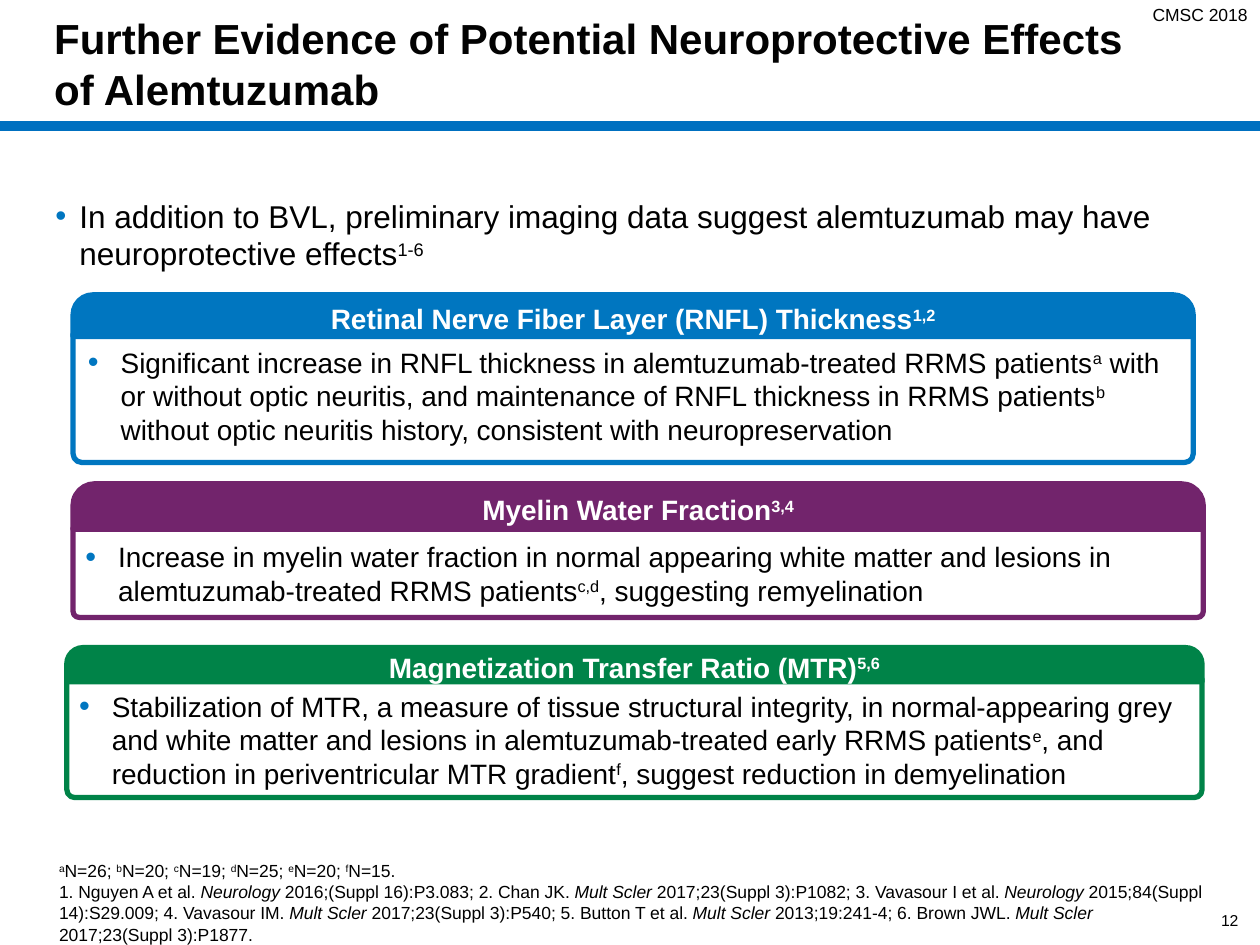
from lxml.etree import SubElement as Sub
from pptx import Presentation
from pptx.dml.color import RGBColor as Rgb
from pptx.enum.shapes import MSO_CONNECTOR as Conn, MSO_SHAPE as Shape
from pptx.enum.text import MSO_ANCHOR as Anchor, MSO_AUTO_SIZE as Fit, PP_ALIGN as Align
from pptx.oxml.ns import qn
from pptx.util import Inches, Pt

HUES = {"black": "000000", "title": "020202", "white": "FFFFFF", "rule": "0070C0",
        "blue": "0076C0", "plum": "72246C", "green": "008348"}


def hue(name):
    return Rgb.from_string(HUES[name])


def write(shape, text, size=16, color="black", bold=False, align=Align.LEFT,
          anchor=Anchor.TOP, indent=0, before=0, scale=100):
    """Fill a shape with text; ^x^ is superscript, _x_ is italic, | breaks a line."""
    frame = shape.text_frame
    frame.word_wrap, frame.auto_size = True, Fit.NONE
    frame.vertical_anchor = anchor
    for n, line in enumerate(text.split("\n")):
        para = frame.add_paragraph() if n else frame.paragraphs[0]
        para.alignment, para.space_before = align, Pt(before)
        if indent:
            props = para._p.get_or_add_pPr()
            props.set("marL", str(Inches(indent)))
            props.set("indent", str(-Inches(indent)))
            Sub(Sub(props, qn("a:buClr")), qn("a:srgbClr"), val=HUES["blue"])
            Sub(props, qn("a:buSzPct"), val=str(scale * 1000))
            Sub(props, qn("a:buFont"), typeface="Arial")
            Sub(props, qn("a:buChar"), char="•")
        for i, part in enumerate(line.split("^")):
            for j, bit in enumerate(part.split("_")):
                for k, words in enumerate(bit.split("|")):
                    if k:
                        para.add_line_break()
                    if not words:
                        continue
                    run = para.add_run()
                    run.text = words
                    font = run.font
                    font.name, font.size, font.bold = "Arial", Pt(size), bold
                    font.italic = j % 2 == 1
                    font.color.rgb = hue(color)
                    if i % 2:
                        font._element.set("baseline", "30000")


deck = Presentation()
deck.slide_width, deck.slide_height = Inches(10), Inches(7.5)
slide = deck.slides.add_slide(deck.slide_layouts[1])
shapes = slide.shapes

# Title and rule
title = shapes.title
title.left, title.top, title.width, title.height = map(Inches, (0.33, 0, 9.51, 1))
write(title, "Further Evidence of Potential Neuroprotective Effects |of Alemtuzumab",
      size=24, color="title", bold=True, anchor=Anchor.MIDDLE)
rule = shapes.add_connector(Conn.STRAIGHT, 0, Inches(1), Inches(10), Inches(1))
rule.line.color.rgb, rule.line.width = hue("rule"), Pt(5.75)
Sub(rule._element.spPr, qn("a:effectLst"))

# Lead bullet
body = slide.placeholders[1]
body.left, body.top, body.width, body.height = map(Inches, (0.34, 1.51, 9.33, 5.26))
write(body, "In addition to BVL, preliminary imaging data suggest alemtuzumab may have "
      "neuroprotective effects^1-6^", size=18, indent=0.19)

# Panels: color, left, width, head (top, height), frame (top, height),
# text (left, top, width, height), anchor, heading, finding
panels = [
    ("blue", 0.58, 8.89, (2.34, 0.33), (2.65, 1.02), (0.6, 2.69, 8.86, 0.65), Anchor.TOP,
     "Retinal Nerve Fiber Layer (RNFL) Thickness^1,2^",
     "Significant increase in RNFL thickness in alemtuzumab-treated RRMS patients^a^ with "
     "or without optic neuritis, and maintenance of RNFL thickness in RRMS patients^b^ "
     "without optic neuritis history, consistent with neuropreservation"),
    ("green", 0.53, 9.01, (5.14, 0.27), (5.39, 0.94), (0.53, 5.42, 9.01, 0.97), Anchor.TOP,
     "Magnetization Transfer Ratio (MTR)^5,6^",
     "Stabilization of MTR, a measure of tissue structural integrity, in normal-appearing "
     "grey and white matter and lesions in alemtuzumab-treated early RRMS patients^e^, and "
     "reduction in periventricular MTR gradient^f^, suggest reduction in demyelination"),
    ("plum", 0.58, 8.97, (3.84, 0.36), (4.19, 0.71), (0.58, 4.24, 8.96, 0.62), Anchor.MIDDLE,
     "Myelin Water Fraction^3,4^",
     "Increase in myelin water fraction in normal appearing white matter and lesions in "
     "alemtuzumab-treated RRMS patients^c,d^, suggesting remyelination"),
]
for color, left, width, head, frame, area, anchor, heading, finding in panels:
    for (top, height), bend, turn in ((frame, 0.067, 180), (head, 0.479, 0)):
        box = shapes.add_shape(Shape.ROUND_2_SAME_RECTANGLE,
                               *map(Inches, (left, top, width, height)))
        box.adjustments[0], box.adjustments[1] = bend, 0
        box.rotation, box.shadow.inherit = turn, False
        box.line.color.rgb, box.line.width = hue(color), Pt(3)
        if turn:
            box.fill.background()
        else:
            box.fill.solid()
            box.fill.fore_color.rgb = hue(color)
            write(box, heading, color="white", bold=True, align=Align.CENTER,
                  anchor=Anchor.MIDDLE)
    note = shapes.add_textbox(*map(Inches, area))
    write(note, finding, anchor=anchor, indent=0.26, before=6, scale=110)

# Meeting tag, footnotes and page number
tag = shapes.add_textbox(*map(Inches, (8.43, -0.02, 1.57, 0.27)))
write(tag, "CMSC 2018", size=10, align=Align.RIGHT)
notes = shapes.add_textbox(*map(Inches, (0.37, 6.78, 9.28, 0.77)))
write(notes, "^a^N=26; ^b^N=20; ^c^N=19; ^d^N=25; ^e^N=20; ^f^N=15.\n"
      "1. Nguyen A et al. _Neurology_ 2016;(Suppl 16):P3.083; 2. Chan JK. _Mult Scler _"
      "2017;23(Suppl 3):P1082; 3. Vavasour I et al. _Neurology _2015;84(Suppl 14):S29.009; "
      "4. Vavasour IM. _Mult Scler _2017;23(Suppl 3):P540; 5. Button T et al. _Mult Scler _"
      "2013;19:241-4; 6. Brown JWL. _Mult Scler _2017;23(Suppl 3):P1877.", size=10)
page = shapes.add_textbox(*map(Inches, (7.5, 7.1, 2.33, 0.4)))
inner = page.text_frame
inner.margin_left = inner.margin_right = inner.margin_top = inner.margin_bottom = 0
write(page, "12", size=9, align=Align.RIGHT, anchor=Anchor.MIDDLE)

deck.save("out.pptx")
